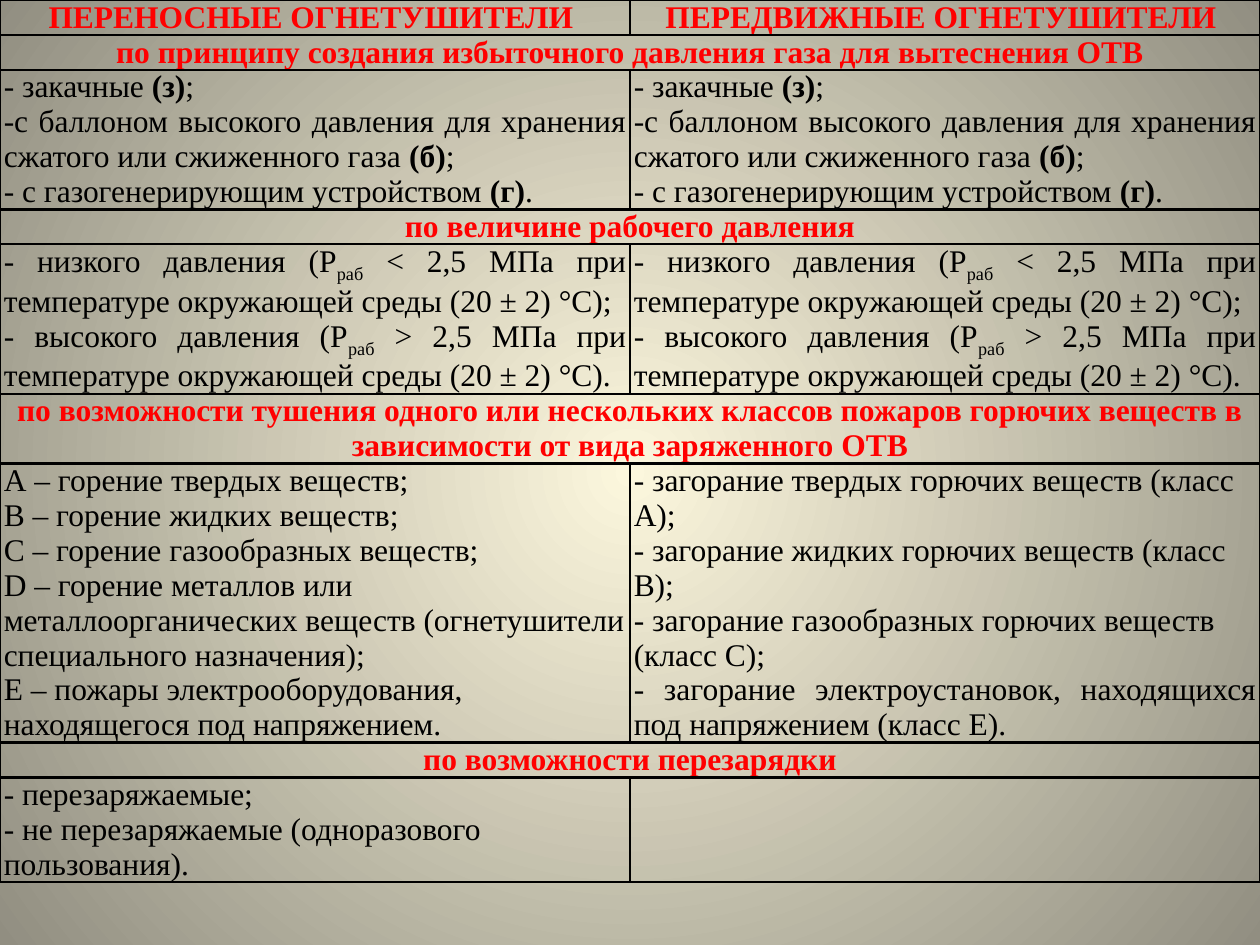
"""Build a slide with a table that classifies portable and mobile fire extinguishers."""
from lxml import etree
from pptx import Presentation
from pptx import util as u
from pptx.dml import color
from pptx.enum import text
from pptx.oxml import ns, parse_xml

HUES = {"head": "FF0000", "body": "000000", "line": "000000", "glow": "FCF7DD", "edge": "918E81"}
MID, JUST, LEFT = text.PP_ALIGN.CENTER, text.PP_ALIGN.JUSTIFY, text.PP_ALIGN.LEFT


def add_text(cell, paras, head=False):
    """Write (align, text) pairs; odd pieces between bars are bold or subscript."""
    frame = cell.text_frame
    for i, (align, words) in enumerate(paras):
        para = frame.add_paragraph() if i else frame.paragraphs[0]
        para.alignment = align
        for j, piece in enumerate(words.split("|")):
            run = para.add_run()
            run.text = piece
            font = run.font
            font.name, font.size = "Times New Roman", u.Pt(18)
            font.color.rgb = color.RGBColor.from_string(HUES["head" if head else "body"])
            sub = piece == "раб"
            font.bold = head or (j % 2 == 1 and not sub)
            if sub:
                font._element.set("baseline", "-25000")


def add_lines(cell):
    """Rule all four sides of a cell."""
    props = cell._tc.get_or_add_tcPr()
    for i, side in enumerate(("lnL", "lnR", "lnT", "lnB")):
        props.insert(i, parse_xml(
            f'<a:{side} {ns.nsdecls("a")} w="{u.Pt(1.5)}"><a:solidFill>'
            f'<a:srgbClr val="{HUES["line"]}"/></a:solidFill></a:{side}>'))


force = [
    (JUST, "- закачные |(з)|;"),
    (JUST, "-с баллоном высокого давления для хранения сжатого или сжиженного газа |(б)|;"),
    (JUST, "- с газогенерирующим устройством |(г)|."),
]
load = [
    (JUST, "- низкого давления (Р|раб| < 2,5 МПа при температуре окружающей среды (20 ± 2) °С);"),
    (JUST, "- высокого давления (Р|раб| > 2,5 МПа при температуре окружающей среды (20 ± 2) °С)."),
]
fires = [
    (LEFT, "А – горение твердых веществ;"),
    (LEFT, "В – горение жидких веществ;"),
    (LEFT, "С – горение газообразных веществ;"),
    (LEFT, "D – горение металлов или металлоорганических веществ "
           "(огнетушители специального назначения);"),
    (LEFT, "Е – пожары электрооборудования, находящегося под напряжением."),
]
burns = [
    (LEFT, "- загорание твердых горючих веществ (класс А);"),
    (LEFT, "- загорание жидких горючих веществ (класс В);"),
    (LEFT, "- загорание газообразных горючих веществ (класс С);"),
    (JUST, "- загорание электроустановок, находящихся под напряжением (класс Е)."),
]
refill = [
    (JUST, "- перезаряжаемые;"),
    (LEFT, "- не перезаряжаемые (одноразового пользования)."),
]
rows = [
    (1, ["ПЕРЕНОСНЫЕ ОГНЕТУШИТЕЛИ ", "ПЕРЕДВИЖНЫЕ ОГНЕТУШИТЕЛИ "]),
    (1, ["по принципу создания избыточного давления газа для вытеснения ОТВ"]),
    (4, [force, force]),
    (1, ["по величине рабочего давления"]),
    (4, [load, load]),
    (2, ["по возможности тушения одного или нескольких классов пожаров горючих веществ "
         "в зависимости от вида заряженного ОТВ"]),
    (8, [fires, burns]),
    (1, ["по возможности перезарядки"]),
    (3, [refill]),
]

deck = Presentation()
deck.slide_width, deck.slide_height = u.Inches(10), u.Inches(7.5)
slide = deck.slides.add_slide(deck.slide_layouts[6])

fill = slide.background.fill
fill.gradient()
for stop, name, spot in zip(fill.gradient_stops, ("glow", "edge"), (0, 1)):
    stop.color.rgb = color.RGBColor.from_string(HUES[name])
    stop.position = spot
lin = slide.background._cSld.find(".//" + ns.qn("a:lin"))
ring = etree.Element(ns.qn("a:path"), {"path": "circle"})
etree.SubElement(ring, ns.qn("a:fillToRect"), {side: "50000" for side in "ltrb"})
lin.getparent().replace(lin, ring)

step = 0.27
high = step * sum(count for count, _ in rows)
grid = slide.shapes.add_table(len(rows), 2, 0, 0, u.Inches(10), u.Inches(high)).table
grid.first_row = grid.horz_banding = False
for r, (count, parts) in enumerate(rows):
    grid.rows[r].height = u.Inches(step * count)
    for cell in grid.rows[r].cells:
        cell.fill.background()
        cell.margin_left = cell.margin_right = u.Inches(0.03)
        cell.margin_top = cell.margin_bottom = 0
        add_lines(cell)
    head = isinstance(parts[0], str)
    if head and len(parts) == 1:
        grid.cell(r, 0).merge(grid.cell(r, 1))
    for c, part in enumerate(parts):
        add_text(grid.cell(r, c), [(MID, part)] if head else part, head)

deck.save("out.pptx")
